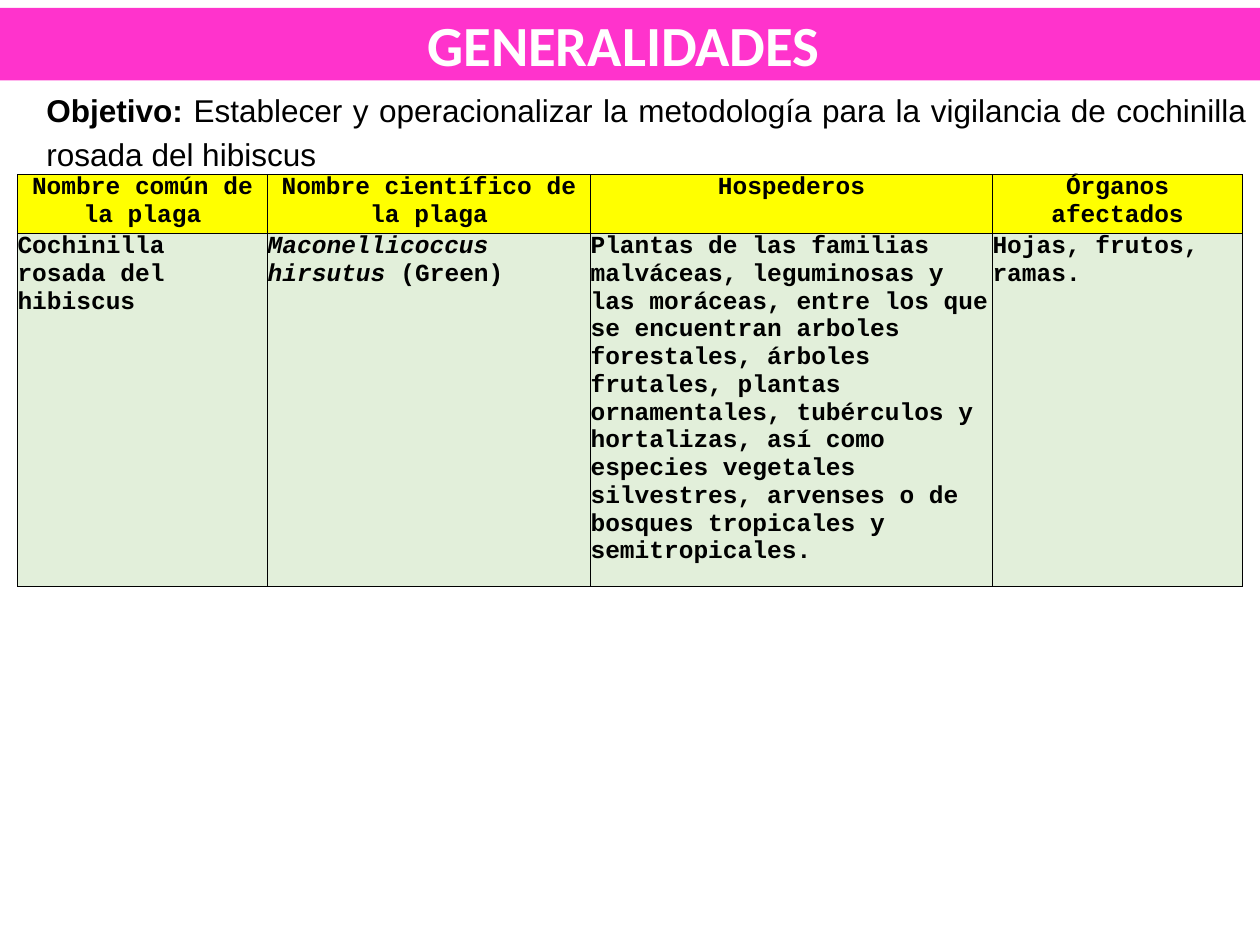
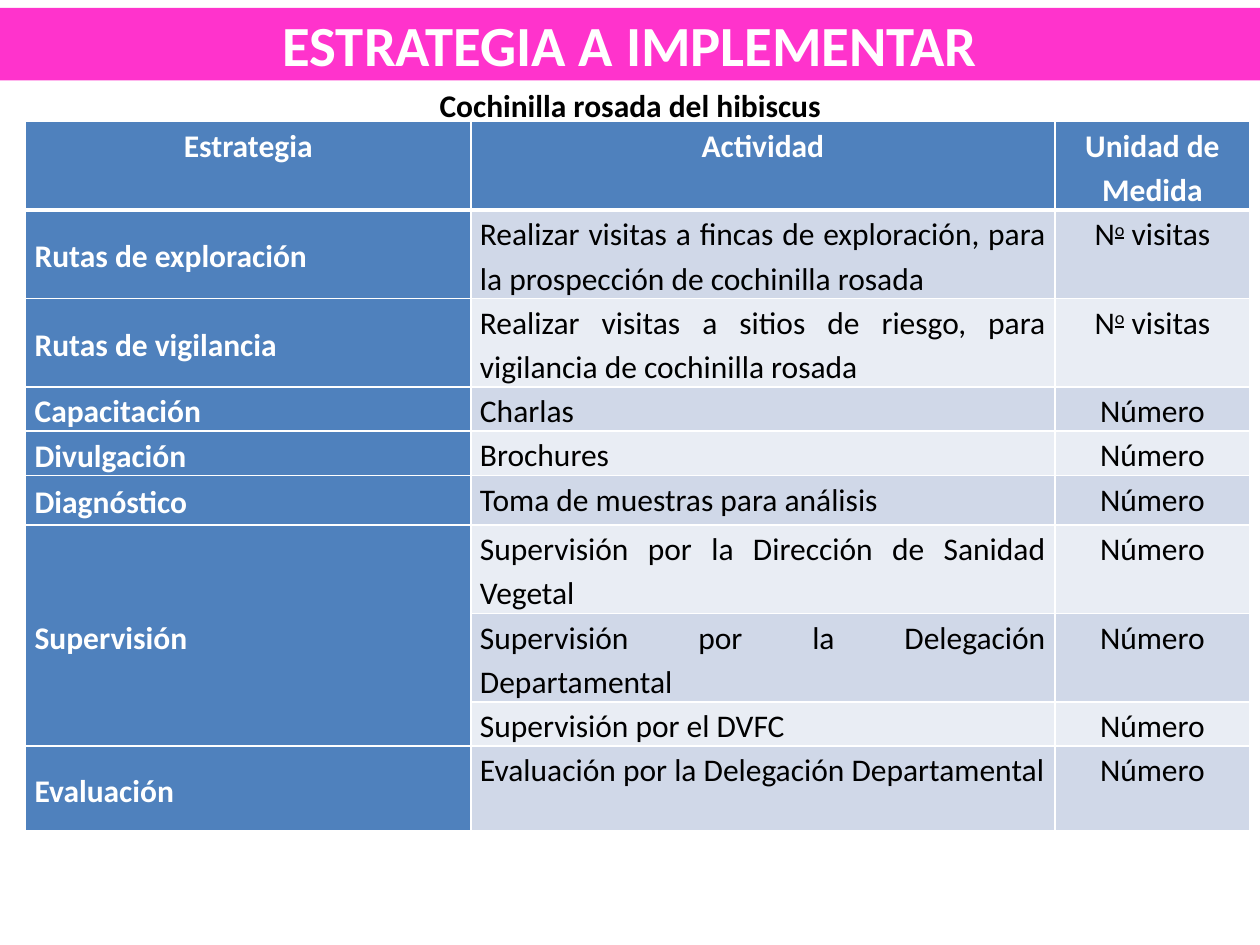
from dataclasses import dataclass

from pptx import Presentation
from pptx.dml.color import RGBColor
from pptx.enum import text as tx
from pptx.oxml import parse_xml
from pptx.oxml.ns import nsdecls
from pptx.util import Pt

LEFT, MID, JUST = tx.PP_ALIGN.LEFT, tx.PP_ALIGN.CENTER, tx.PP_ALIGN.JUSTIFY
TOP, CENTRE = tx.MSO_ANCHOR.TOP, tx.MSO_ANCHOR.MIDDLE


@dataclass(frozen=True)
class Theme:
    pink: str = "FF33CC"
    white: str = "FFFFFF"
    black: str = "000000"
    yellow: str = "FFFF00"
    green: str = "E2EFDA"
    blue: str = "4F81BD"
    bands: tuple = ("D0D8E8", "E9EDF4")
    sans: str = "Calibri"
    plain: str = "Arial"
    mono: str = "Courier New"
    title: float = 32.4
    body: float = 18
    small: float = 14
    lead: float = 1.15


T = Theme()
BAND = (0, 4.5, 720, 41.5)

PESTS = [
    ["Nombre común de la plaga", "Nombre científico de la plaga",
     "Hospederos", "Órganos afectados"],
    ["Cochinilla rosada del hibiscus",
     [("Maconellicoccus hirsutus", {"italic": True}), (" (Green)", {})],
     "Plantas de las familias malváceas, leguminosas y las moráceas, entre los "
     "que se encuentran arboles forestales, árboles frutales, plantas "
     "ornamentales, tubérculos y hortalizas, así como especies vegetales "
     "silvestres, arvenses o de bosques tropicales y semitropicales.",
     "Hojas, frutos, ramas."],
]

VISITS = [("N", {}), ("o", {"underline": True, "raised": True}), (" visitas", {})]
COUNT = "Número"
HEADS = ["Estrategia", "Actividad", "Unidad de Medida"]
# Strategy, activity, unit, row height; no strategy continues the one above
PLAN = [
    ("Rutas de exploración", "Realizar visitas a fincas de exploración, para la "
     "prospección de cochinilla rosada", VISITS, 50.4),
    ("Rutas de vigilancia", "Realizar visitas a sitios de riesgo, para vigilancia "
     "de cochinilla rosada", VISITS, 50.4),
    ("Capacitación", "Charlas", COUNT, 25.2),
    ("Divulgación", "Brochures", COUNT, 25.2),
    ("Diagnóstico", "Toma de muestras para análisis", COUNT, 28.3),
    ("Supervisión", "Supervisión por la Dirección de Sanidad Vegetal", COUNT, 50.4),
    (None, "Supervisión por la Delegación Departamental", COUNT, 50.4),
    (None, "Supervisión por el DVFC", COUNT, 25.2),
    ("Evaluación", "Evaluación por la Delegación Departamental", COUNT, 48.3),
]


def write(frame, runs, font=T.sans, size=T.body, color=T.black, bold=False,
          align=LEFT, lead=None):
    """Fill a frame with one paragraph; runs is a string or (text, format) pairs."""
    frame.word_wrap = True
    par = frame.paragraphs[0]
    par.alignment = align
    if lead:
        par.line_spacing = lead
    for words, look in [(runs, {})] if isinstance(runs, str) else runs:
        run = par.add_run()
        run.text = words
        face = run.font
        face.name, face.size = font, Pt(size)
        face.color.rgb = RGBColor.from_string(color)
        face.bold = look.get("bold", bold)
        face.italic = look.get("italic", False)
        face.underline = look.get("underline", False)
        if look.get("raised"):
            run._r.get_or_add_rPr().set("baseline", "30000")


def place(shape, box):
    shape.left, shape.top, shape.width, shape.height = map(Pt, box)


def banner(slide, words):
    bar = slide.shapes.title
    place(bar, BAND)
    bar.fill.solid()
    bar.fill.fore_color.rgb = RGBColor.from_string(T.pink)
    frame = bar.text_frame
    frame.auto_size = tx.MSO_AUTO_SIZE.NONE
    frame.vertical_anchor = CENTRE
    write(frame, words, size=T.title, color=T.white, bold=True, align=MID)


def label(slide, box, runs, **look):
    area = slide.shapes.add_textbox(*map(Pt, box))
    write(area.text_frame, runs, **look)
    area.text_frame.auto_size = tx.MSO_AUTO_SIZE.SHAPE_TO_FIT_TEXT


def grid(slide, spot, cols, rows):
    frame = slide.shapes.add_table(len(rows), len(cols), *map(Pt, spot),
                                   Pt(sum(cols)), Pt(sum(rows)))
    table = frame.table
    for col, width in zip(table.columns, cols):
        col.width = Pt(width)
    for row, height in zip(table.rows, rows):
        row.height = Pt(height)
    return table


def edge(cell, color, width, base):
    """Draw the four borders; base is the width of the bottom one."""
    props = cell._tc.get_or_add_tcPr()
    for side in "LRTB":
        wide = Pt(base if side == "B" else width)
        props.append(parse_xml(
            f'<a:ln{side} {nsdecls("a")} w="{wide}"><a:solidFill>'
            f'<a:srgbClr val="{color}"/></a:solidFill></a:ln{side}>'))


def style(cell, fill, line, width, base=None, pad=0, anchor=TOP):
    edge(cell, line, width, base or width)
    cell.fill.solid()
    cell.fill.fore_color.rgb = RGBColor.from_string(fill)
    cell.margin_left = cell.margin_right = Pt(pad)
    cell.margin_top = cell.margin_bottom = 0
    cell.vertical_anchor = anchor


def pests(slide, spot):
    table = grid(slide, spot, [143, 184.5, 229.7, 143], [33.7, 201.7])
    kinds = [(T.yellow, MID), (T.green, LEFT)]
    for r, (row, (fill, align)) in enumerate(zip(PESTS, kinds)):
        for c, runs in enumerate(row):
            cell = table.cell(r, c)
            style(cell, fill, T.black, 0.5)
            write(cell.text_frame, runs, font=T.mono, size=T.small, bold=True,
                  align=align)


def plan(slide, spot):
    table = grid(slide, spot, [254.5, 333.7, 111.5],
                 [50] + [row[-1] for row in PLAN])
    for c, head in enumerate(HEADS):
        cell = table.cell(0, c)
        style(cell, T.blue, T.white, 1, base=3, pad=5.2)
        write(cell.text_frame, head, color=T.white, bold=True, align=MID,
              lead=T.lead)
    first = 1
    for r, (name, task, unit, _) in enumerate(PLAN, 1):
        shade = T.bands[(r - 1) % 2]
        looks = [(name, T.blue, T.white, JUST, CENTRE),
                 (task, shade, T.black, JUST, TOP),
                 (unit, shade, T.black, MID, TOP)]
        for c, (runs, fill, color, align, anchor) in enumerate(looks):
            cell = table.cell(r, c)
            style(cell, fill, T.white, 1, pad=5.2, anchor=anchor)
            if runs:
                write(cell.text_frame, runs, color=color, bold=c == 0,
                      align=align, lead=T.lead)
        if name:
            first = r
        elif r == len(PLAN) or PLAN[r][0]:
            table.cell(first, 0).merge(table.cell(r, 0))


def general(slide):
    banner(slide, "GENERALIDADES ")
    label(slide, (19.5, 45.4, 700, 57.6),
          [("Objetivo: ", {"bold": True}),
           ("Establecer y operacionalizar la metodología para la vigilancia de "
            "cochinilla rosada del hibiscus", {})],
          font=T.plain, align=JUST, lead=T.lead)
    pests(slide, (10, 99.7))


def strategy(slide):
    banner(slide, "ESTRATEGIA A IMPLEMENTAR")
    plan(slide, (14.6, 69.5))
    label(slide, (20, 45.4, 680.4, 29), "Cochinilla rosada del hibiscus",
          bold=True, align=MID)


def main():
    deck = Presentation()
    deck.slide_width, deck.slide_height = Pt(720), Pt(540)
    for build in (general, strategy):
        build(deck.slides.add_slide(deck.slide_layouts[5]))
    deck.save("out.pptx")


if __name__ == "__main__":
    main()
